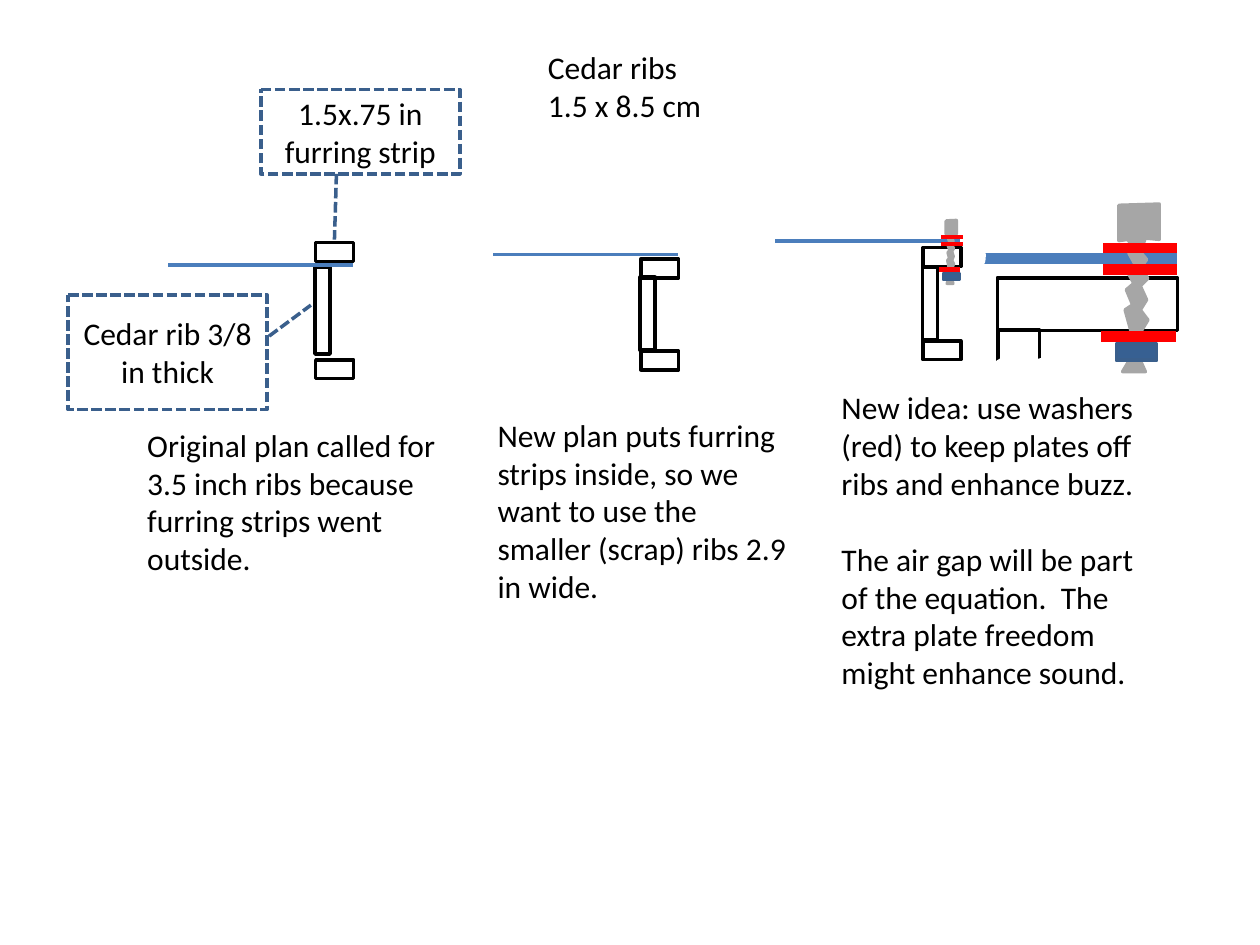
import dataclasses

import lxml.etree
import pptx
import pptx.dml.color
import pptx.enum.dml
import pptx.enum.shapes
import pptx.enum.text
import pptx.oxml.ns
import pptx.util

SHAPE = pptx.enum.shapes.MSO_SHAPE


@dataclasses.dataclass(frozen=True)
class Theme:
    font: str = "Calibri"
    size: float = 18
    paragraph_gap: float = 22
    outline: float = 2
    thin: float = 2.25
    medium: float = 3
    thick: float = 6
    ink: str = "000000"
    paper: str = "FFFFFF"
    plate: str = "4B7EBC"
    nut: str = "376092"
    edge: str = "3A5F8C"
    bolt: str = "A6A6A6"
    washer: str = "FF0000"


THEME = Theme()

BOLT = [
    (17, 38), (22, 44), (17, 51), (23, 59), (17, 65), (22, 76), (17, 84),
    (23, 92), (17, 102), (22, 112), (16, 122), (21, 133), (3, 133), (9, 123),
    (4, 107), (10, 102), (5, 84), (11, 80), (6, 68), (12, 63), (6, 52),
    (13, 48), (8, 39), (14, 37), (7, 28), (0, 29), (0, 1), (32, 0),
    (32, 28), (21, 27),
]
BREAK_START = (5, 9)
BREAK_CURVES = [
    [(8, 6), (15, 1), (20, 0)],
    [(24, -1), (30, 4), (35, 5)],
    [(39, 5), (47, 1), (49, 3)],
    [(51, 6), (57, 17), (49, 20)],
    [(42, 23), (10, 23), (3, 21)],
    [(-4, 19), (2, 13), (5, 9)],
]


def inches(value):
    return pptx.util.Cm(value * 2.54)


def rgb(value):
    return pptx.dml.color.RGBColor.from_string(value)


def style(sp, line, fill=None):
    sp.shadow.inherit = False
    if fill:
        sp.fill.solid()
        sp.fill.fore_color.rgb = rgb(fill)
    else:
        sp.fill.background()
    sp.line.color.rgb = rgb(line)
    sp.line.width = pptx.util.Pt(THEME.outline)


def add_box(s, box, line=THEME.ink, fill=None, rotation=0, kind=SHAPE.RECTANGLE):
    sp = s.shapes.add_shape(kind, *map(inches, box))
    style(sp, line, fill)
    sp.rotation = rotation
    return sp


def add_line(s, right, left, y, color, width):
    cx = s.shapes.add_connector(
        pptx.enum.shapes.MSO_CONNECTOR.STRAIGHT,
        *map(inches, (right, y, left, y)))
    cx.line.color.rgb = rgb(color)
    cx.line.width = pptx.util.Pt(width)
    lxml.etree.SubElement(
        cx._element.spPr, pptx.oxml.ns.qn("a:effectLst"))


def add_outline(s, box, points, size, color):
    left, top, width, height = box
    scaled = [(inches(left + x * width / size[0]),
               inches(top + y * height / size[1])) for x, y in points]
    fb = s.shapes.build_freeform(*scaled[0])
    fb.add_line_segments(scaled[1:], close=True)
    style(fb.convert_to_shape(), color, color)


def break_points(steps=8):
    points = [BREAK_START]
    for b, c, d in BREAK_CURVES:
        a = points[-1]
        for i in range(1, steps + 1):
            t = i / steps
            u = 1 - t
            points.append(tuple(
                u**3 * a[k] + 3 * u * u * t * b[k] + 3 * u * t * t * c[k] + t**3 * d[k]
                for k in (0, 1)))
    return points


def write(tf, paragraphs, align=pptx.enum.text.PP_ALIGN.LEFT, gap=0):
    tf.word_wrap = True
    for i, text in enumerate(paragraphs):
        p = tf.add_paragraph() if i else tf.paragraphs[0]
        p.alignment = align
        if i and gap:
            p.space_before = pptx.util.Pt(gap)
        r = p.add_run()
        r.text = text
        r.font.name = THEME.font
        r.font.size = pptx.util.Pt(THEME.size)
        r.font.color.rgb = rgb(THEME.ink)


def add_text(s, box, *paragraphs, gap=0):
    tf = s.shapes.add_textbox(*map(inches, box)).text_frame
    write(tf, paragraphs, gap=gap)
    tf.auto_size = pptx.enum.text.MSO_AUTO_SIZE.SHAPE_TO_FIT_TEXT


def add_callout(s, box, text, leader):
    sp = add_box(s, box, THEME.edge, kind=SHAPE.LINE_CALLOUT_1)
    sp.line.dash_style = pptx.enum.dml.MSO_LINE.SQUARE_DOT
    for i, value in enumerate(leader):
        sp.adjustments[i] = value
    sp.text_frame.vertical_anchor = pptx.enum.text.MSO_ANCHOR.MIDDLE
    write(sp.text_frame, [text], pptx.enum.text.PP_ALIGN.CENTER)


def add_section(s, left, top, height, strip_tops, plate_y):
    add_box(s, (left, top, 0.12, height))
    for strip_top in strip_tops:
        add_box(s, (left + 0.08, strip_top, 0.15, 0.3), rotation=90)
    add_line(s, left + 0.3, left - 1.17, plate_y, THEME.plate, THEME.thin)


def add_bolt(s, box):
    add_outline(s, box, BOLT, (32, 133), THEME.bolt)


def add_nut(s, box):
    add_box(s, box, THEME.edge, THEME.nut)


def add_break(s, box):
    add_outline(s, box, break_points(), (53, 22), THEME.paper)


def add_small_joint(s):
    add_bolt(s, (7.51, 1.75, 0.08, 0.5))
    add_nut(s, (7.49, 2.17, 0.12, 0.05))
    add_line(s, 7.62, 7.45, 2.14, THEME.washer, THEME.medium)
    for y in (1.88, 1.94):
        add_line(s, 7.64, 7.47, y, THEME.washer, THEME.thin)


def add_large_joint(s):
    add_box(s, (8.42, 1.7, 0.42, 1.43), rotation=90)
    add_line(s, 9.34, 7.75, 2.05, THEME.plate, THEME.thick)
    add_bolt(s, (8.88, 1.62, 0.32, 1.33))
    add_line(s, 9.33, 8.74, 2.67, THEME.washer, THEME.thick)
    add_nut(s, (8.86, 2.73, 0.32, 0.13))
    for y in (2.14, 1.97):
        add_line(s, 9.34, 8.75, y, THEME.washer, THEME.thick)
    add_box(s, (7.92, 2.62, 0.33, 0.29))
    add_break(s, (7.81, 2.83, 0.53, 0.22))
    add_break(s, (7.67, 1.89, 0.14, 0.22))


def main():
    prs = pptx.Presentation()
    prs.slide_width, prs.slide_height = inches(10), inches(7.5)
    s = prs.slides.add_slide(prs.slide_layouts[6])

    add_text(s, (4.25, 0.33, 3.08, 0.71), "Cedar ribs", "1.5 x 8.5 cm")
    add_section(s, 2.5, 2.12, 0.69, (1.85, 2.78), 2.1)
    add_section(s, 5.08, 2.2, 0.58, (1.98, 2.71), 2.02)
    add_section(s, 7.32, 2.12, 0.58, (1.89, 2.63), 1.91)

    add_text(s, (1.07, 3.33, 2.58, 1.31),
             "Original plan called for 3.5 inch ribs because furring strips went outside.")
    add_text(s, (3.85, 3.25, 2.58, 1.62),
             "New plan puts furring strips inside, so we want to use the smaller "
             "(scrap) ribs 2.9 in wide.")
    add_text(s, (6.58, 3.03, 2.58, 2.52),
             "New idea: use washers (red) to keep plates off ribs and enhance buzz.",
             "The air gap will be part of the equation.  The extra plate freedom "
             "might enhance sound.", gap=THEME.paragraph_gap)

    add_callout(s, (2.07, 0.71, 1.58, 0.67), "1.5x.75 in furring strip",
                (1, 0.38, 1.78, 0.37))
    add_callout(s, (0.54, 2.34, 1.58, 0.91), "Cedar rib 3/8 in thick",
                (0.36, 1.01, 0.09, 1.22))
    add_small_joint(s)
    add_large_joint(s)
    prs.save("out.pptx")


if __name__ == "__main__":
    main()
